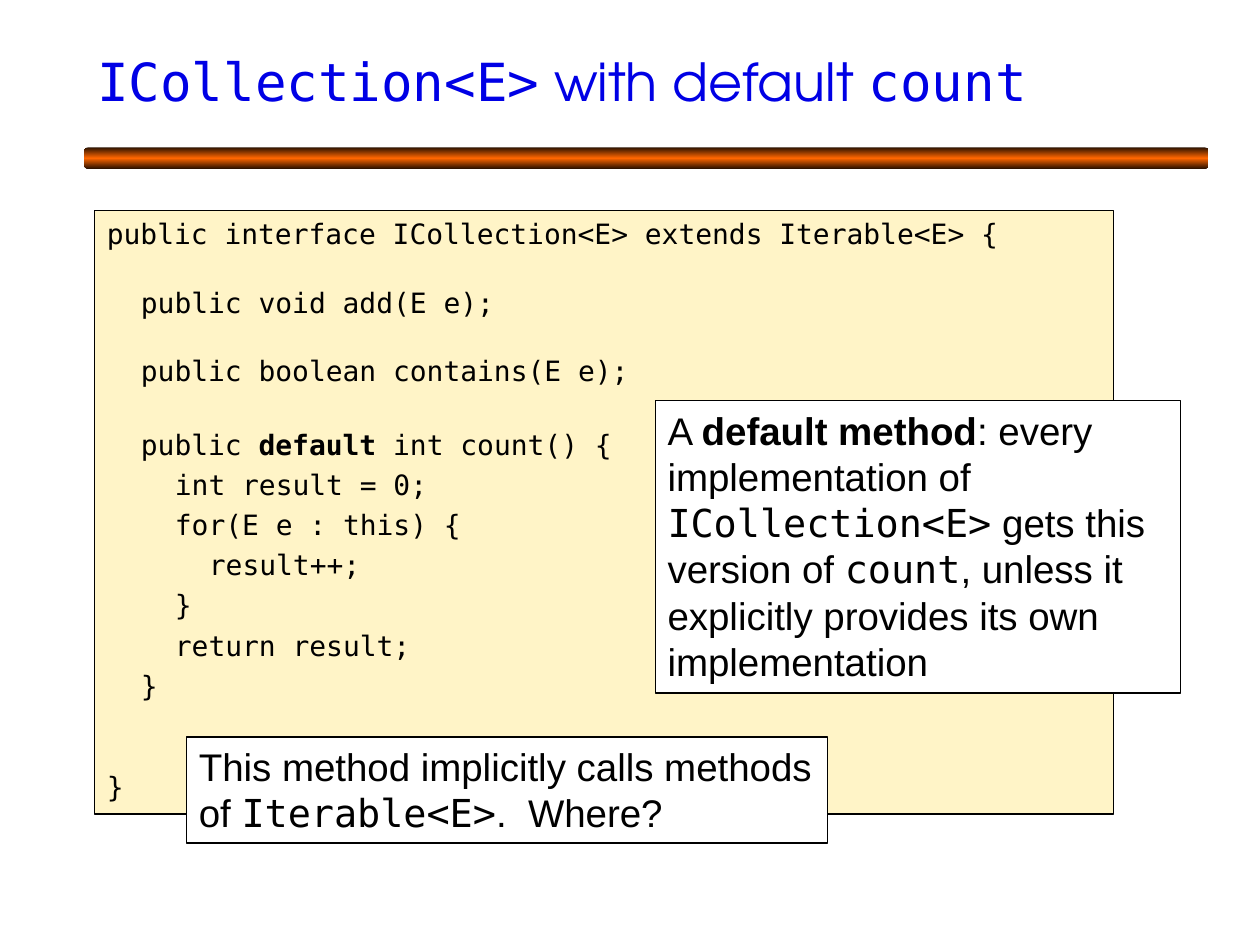
from copy import deepcopy
from dataclasses import dataclass

from pptx import Presentation
from pptx.dml.color import RGBColor
from pptx.enum.shapes import MSO_SHAPE
from pptx.enum.text import MSO_ANCHOR, MSO_AUTO_SIZE, PP_ALIGN
from pptx.util import Inches, Pt

RECTANGLE = MSO_SHAPE.RECTANGLE
ROUNDED = MSO_SHAPE.ROUNDED_RECTANGLE
TOP, MIDDLE = MSO_ANCHOR.TOP, MSO_ANCHOR.MIDDLE
LEFT = PP_ALIGN.LEFT
NO_FIT = MSO_AUTO_SIZE.NONE
TITLE_ONLY = 5


@dataclass(frozen=True)
class Theme:
    title_color: RGBColor = RGBColor(0x00, 0x00, 0xE5)
    ink: RGBColor = RGBColor(0x00, 0x00, 0x00)
    paper: RGBColor = RGBColor(0xFF, 0xFF, 0xFF)
    code_fill: RGBColor = RGBColor(0xFF, 0xF4, 0xC7)
    bar_edge: RGBColor = RGBColor(0x2A, 0x11, 0x00)
    bar_middle: RGBColor = RGBColor(0xFF, 0x66, 0x00)
    title_font: str = "TeX Gyre Adventor"
    body_font: str = "Arial"
    code_font: str = "DejaVu Sans Mono"
    title_size: float = 30
    note_size: float = 22
    code_size: float = 16
    code_indent: float = 0.27


THEME = Theme()
MONO, SANS, HEAD = THEME.code_font, THEME.body_font, THEME.title_font

# Space above a code line, in points
TIGHT, NORMAL, METHOD, BLANK, CLOSING = 0, 3.7, 23, 20, 38.5

TITLE = [("ICollection<E>", MONO), (" with default ", HEAD), ("count", MONO)]

# Indent level, space above, (text, bold) runs
CODE = [
    (0, TIGHT, [("public interface ICollection<E> extends Iterable<E> {", False)]),
    (1, BLANK, [("public void add(E e);", False)]),
    (1, BLANK, [("public boolean contains(E e);", False)]),
    (1, METHOD, [("public ", False), ("default ", True), ("int count() {", False)]),
    (2, NORMAL, [("int result = 0;", False)]),
    (2, NORMAL, [("for(E e : this) {", False)]),
    (3, NORMAL, [("result++;", False)]),
    (2, NORMAL, [("}", False)]),
    (2, NORMAL, [("return result;", False)]),
    (1, NORMAL, [("}", False)]),
    (0, CLOSING, [("}", False)]),
]

DEFAULT_NOTE = [
    ("A ", SANS, False),
    ("default method", SANS, True),
    (": every implementation of ", SANS, False),
    ("ICollection<E>", MONO, False),
    (" gets this version of ", SANS, False),
    ("count", MONO, False),
    (", unless it explicitly provides its own implementation", SANS, False),
]

ITERABLE_NOTE = [
    ("This method implicitly calls methods of ", SANS, False),
    ("Iterable<E>", MONO, False),
    (".  Where?", SANS, False),
]


class PageBuilder:
    def __init__(self, page, theme):
        self.page = page
        self.theme = theme

    def add_span(self, para, text, font, size, color, bold=False):
        span = para.add_run()
        span.text = text
        span.font.name = font
        span.font.size = Pt(size)
        span.font.color.rgb = color
        span.font.bold = bold

    def add_title(self, spans, left, top, width, height):
        title = self.page.shapes.title
        title.left, title.top = Inches(left), Inches(top)
        title.width, title.height = Inches(width), Inches(height)
        frame = title.text_frame
        frame.auto_size = NO_FIT
        frame.vertical_anchor = MIDDLE
        para = frame.paragraphs[0]
        para.alignment = LEFT
        for text, font in spans:
            self.add_span(para, text, font, self.theme.title_size, self.theme.title_color)

    def add_bar(self, left, top, width, height):
        """Draw the rule under the title, dark at both edges and bright between."""
        bar = self.page.shapes.add_shape(
            ROUNDED, Inches(left), Inches(top), Inches(width), Inches(height))
        bar.shadow.inherit = False
        bar.line.fill.background()
        bar.fill.gradient()
        bar.fill.gradient_angle = 90
        first = bar.fill._fill._gradFill.gsLst[0]
        first.addnext(deepcopy(first))
        colors = (self.theme.bar_edge, self.theme.bar_middle, self.theme.bar_edge)
        for stop, color, position in zip(bar.fill.gradient_stops, colors, (0, 0.5, 1)):
            stop.color.rgb = color
            stop.position = position

    def add_box(self, left, top, width, height, fill):
        """Add an outlined box and return its text frame."""
        box = self.page.shapes.add_shape(
            RECTANGLE, Inches(left), Inches(top), Inches(width), Inches(height))
        box.shadow.inherit = False
        box.fill.solid()
        box.fill.fore_color.rgb = fill
        box.line.color.rgb = self.theme.ink
        box.line.width = Pt(0.75)
        frame = box.text_frame
        frame.word_wrap = True
        frame.auto_size = NO_FIT
        frame.vertical_anchor = TOP
        return frame

    def add_code(self, lines, left, top, width, height):
        frame = self.add_box(left, top, width, height, self.theme.code_fill)
        for number, (level, space, spans) in enumerate(lines):
            para = frame.add_paragraph() if number else frame.paragraphs[0]
            para.alignment = LEFT
            para.space_before = Pt(space)
            properties = para._p.get_or_add_pPr()
            properties.set("marL", str(Inches(level * self.theme.code_indent)))
            properties.set("indent", "0")
            for text, bold in spans:
                self.add_span(para, text, MONO, self.theme.code_size, self.theme.ink, bold)

    def add_note(self, spans, left, top, width, height):
        para = self.add_box(left, top, width, height, self.theme.paper).paragraphs[0]
        para.alignment = LEFT
        for text, font, bold in spans:
            self.add_span(para, text, font, self.theme.note_size, self.theme.ink, bold)


def main():
    deck = Presentation()
    deck.slide_width, deck.slide_height = Inches(10), Inches(7.5)
    page = deck.slides.add_slide(deck.slide_layouts[TITLE_ONLY])
    builder = PageBuilder(page, THEME)
    builder.add_bar(0.67, 1.17, 8.92, 0.17)
    builder.add_title(TITLE, 0.67, 0.14, 8.92, 1)
    builder.add_code(CODE, 0.75, 1.67, 8.09, 4.79)
    builder.add_note(DEFAULT_NOTE, 5.2, 3.18, 4.17, 2.32)
    builder.add_note(ITERABLE_NOTE, 1.48, 5.85, 5.09, 0.84)
    deck.save("out.pptx")


if __name__ == "__main__":
    main()
